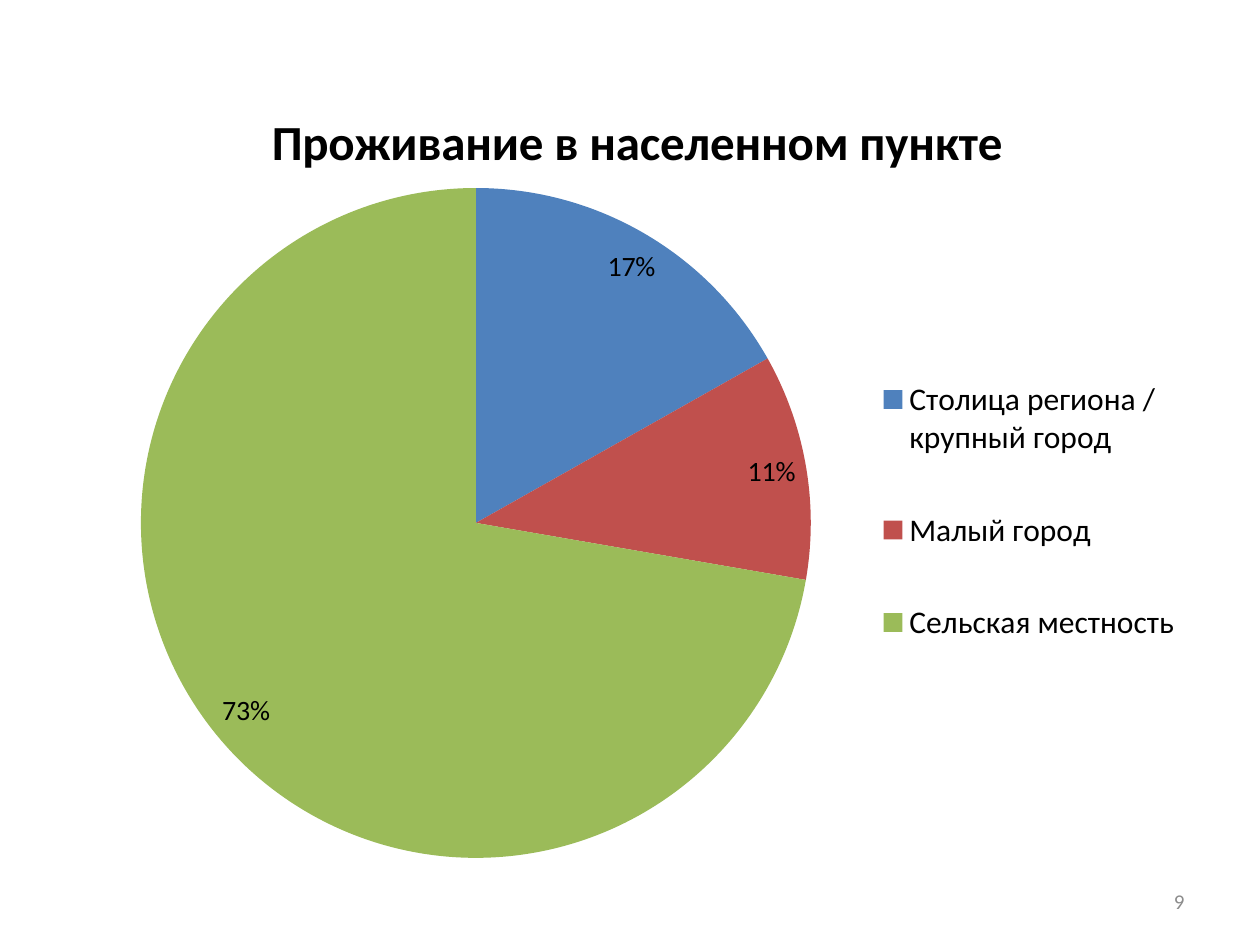
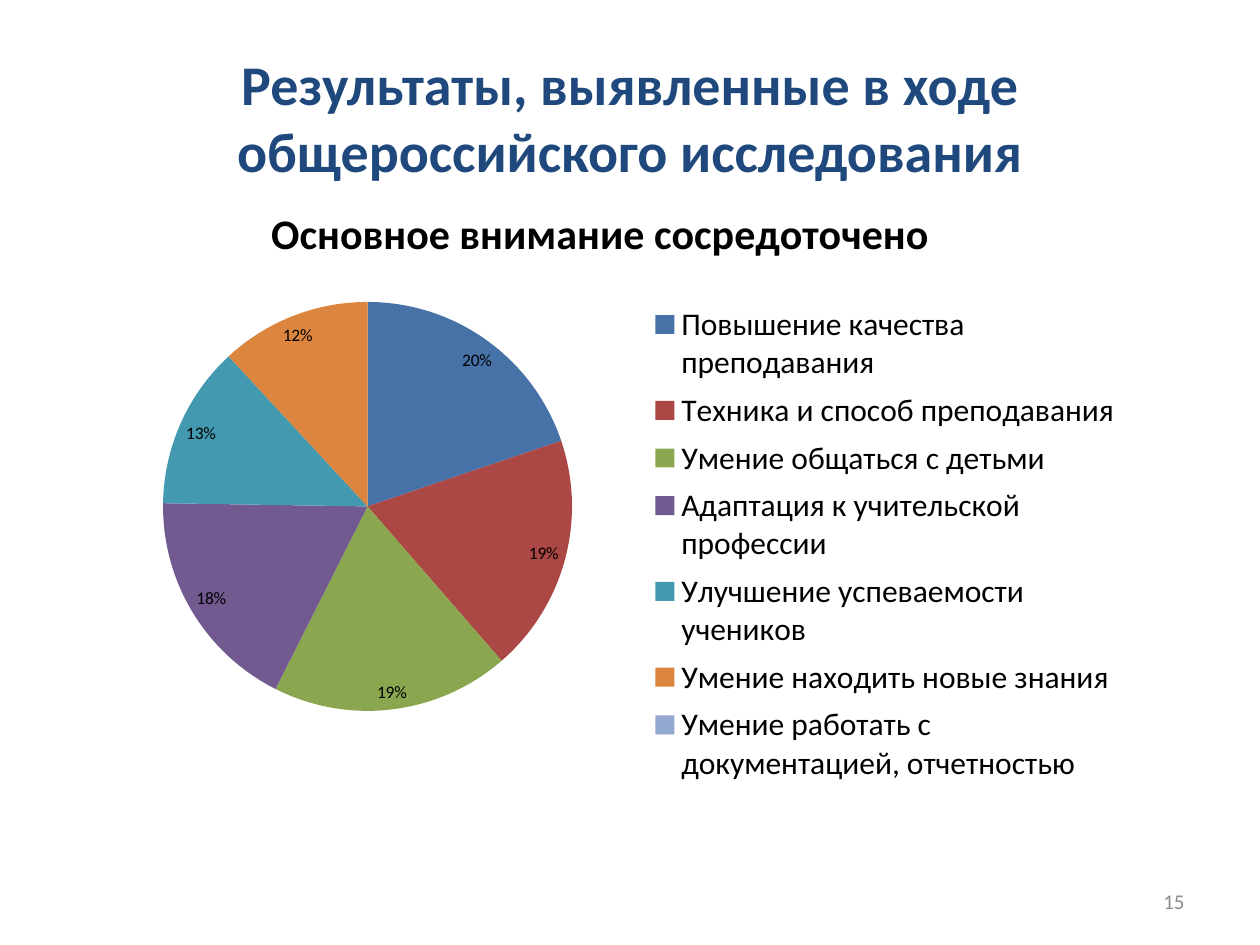
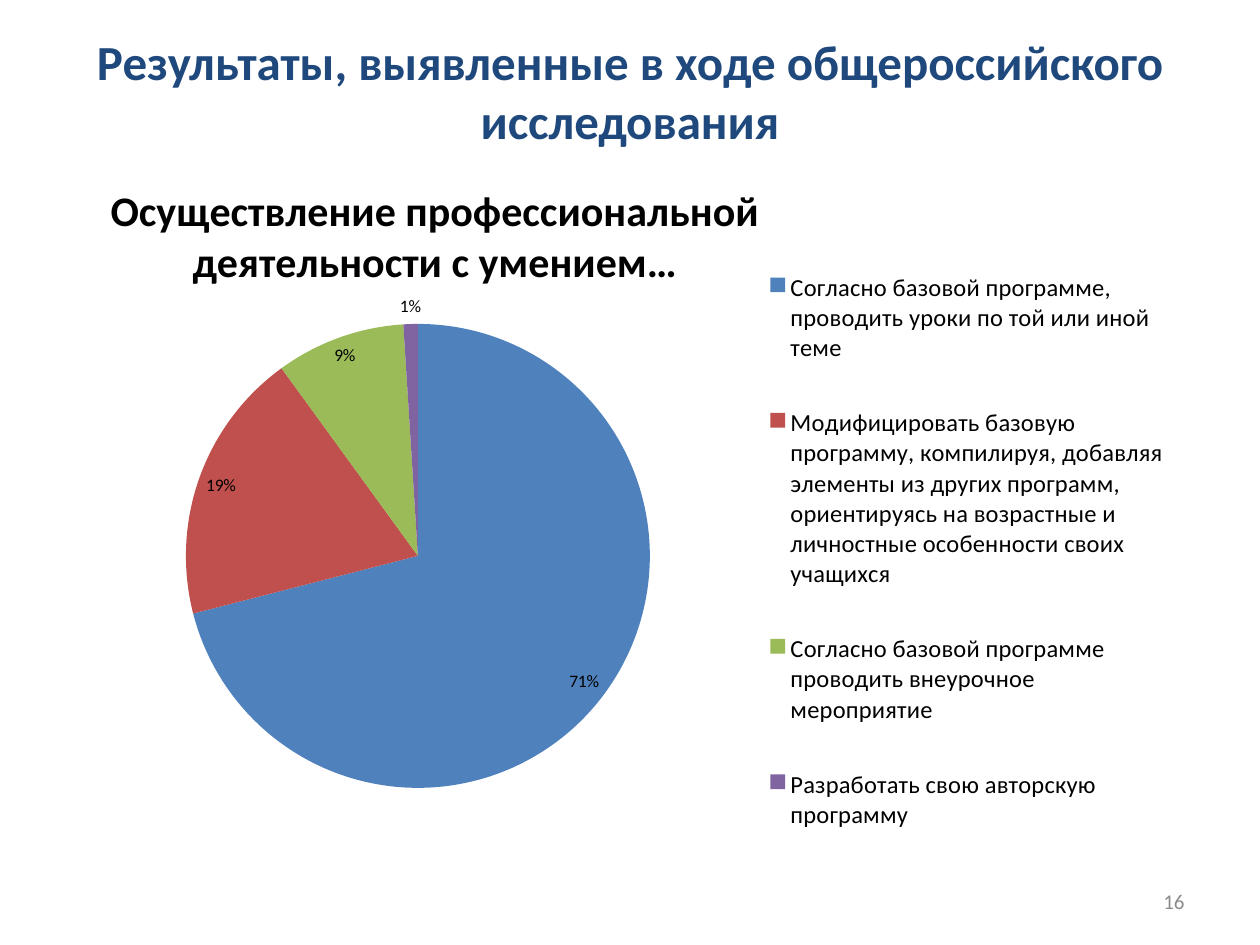
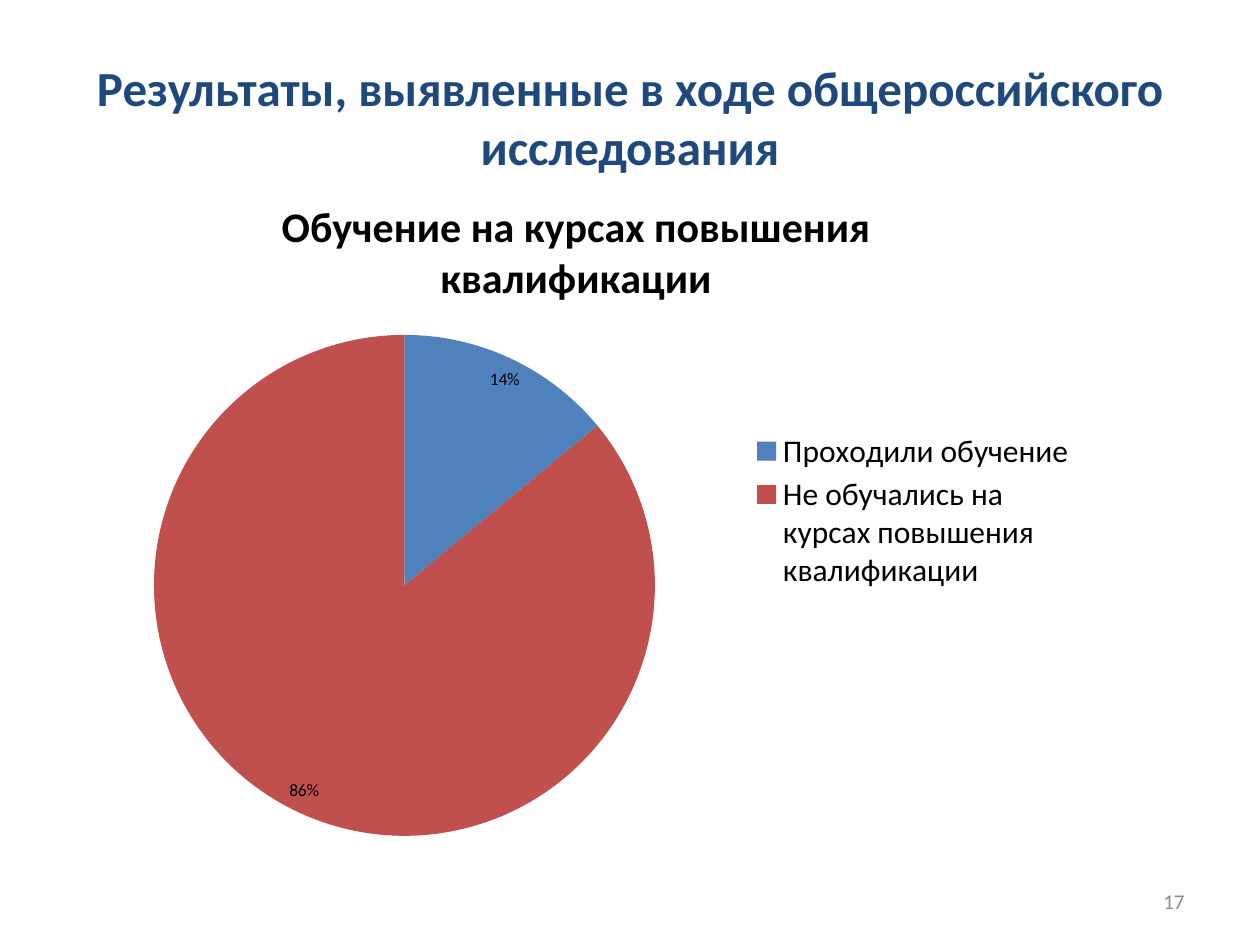
from lxml.etree import SubElement
from pptx import Presentation
from pptx.chart.data import CategoryChartData
from pptx.dml.color import RGBColor
from pptx.enum.chart import XL_CHART_TYPE, XL_LABEL_POSITION, XL_LEGEND_POSITION
from pptx.enum.text import MSO_ANCHOR, PP_ALIGN
from pptx.oxml.ns import qn
from pptx.util import Pt

PX = 914400 // 126
FONT = "Calibri"
BLACK = RGBColor(0x00, 0x00, 0x00)
NAVY = RGBColor(0x1F, 0x49, 0x7D)
GRAY = RGBColor(0x8C, 0x8C, 0x8C)
BLUE = RGBColor(0x4F, 0x81, 0xBD)
RED = RGBColor(0xC0, 0x50, 0x4D)
GREEN = RGBColor(0x9B, 0xBB, 0x59)
PURPLE = RGBColor(0x80, 0x64, 0xA2)
BASIC_COLORS = [BLUE, RED, GREEN, PURPLE]
DEEP_COLORS = [
    RGBColor(0x46, 0x72, 0xA8),
    RGBColor(0xAB, 0x47, 0x44),
    RGBColor(0x8A, 0xA6, 0x4F),
    RGBColor(0x72, 0x59, 0x90),
    RGBColor(0x42, 0x99, 0xB0),
    RGBColor(0xDC, 0x85, 0x3E),
    RGBColor(0x93, 0xA9, 0xCF),
]

HEADING = "Результаты, выявленные в ходе общероссийского исследования"
NUMBER_BOX = (903, 876, 294, 50)
PERCENT_FORMAT = "0%;;"
VALUE_FORMAT = '0"%";;'


def style_font(font, size, color=BLACK, bold=False):
    font.name = FONT
    font.size = Pt(size)
    font.bold = bold
    font.color.rgb = color


def add_text(slide, box, text, size, color, alignment, bold=False):
    shape = slide.shapes.add_textbox(*(length * PX for length in box))
    frame = shape.text_frame
    frame.word_wrap = True
    frame.vertical_anchor = MSO_ANCHOR.MIDDLE
    frame.text = text
    paragraph = frame.paragraphs[0]
    paragraph.alignment = alignment
    style_font(paragraph.runs[0].font, size, color, bold)


def add_heading(slide, height, size):
    add_text(slide, (63, 38, 1134, height), HEADING, size, NAVY, PP_ALIGN.CENTER, True)


def add_slide_number(slide, number):
    add_text(slide, NUMBER_BOX, str(number), 12, GRAY, PP_ALIGN.RIGHT)


def make_layout(parent, index, chart_box, part_box, inner=False):
    for old_layout in parent.findall(qn("c:layout")):
        parent.remove(old_layout)
    layout = SubElement(parent, qn("c:layout"))
    parent.insert(index, layout)
    manual = SubElement(layout, qn("c:manualLayout"))
    settings = [("layoutTarget", "inner")] if inner else []
    settings += [("xMode", "edge"), ("yMode", "edge")]
    _, _, width, height = chart_box
    extents = (width, height, width, height)
    settings += [
        (name, f"{length / extent:.4f}")
        for name, length, extent in zip("xywh", part_box, extents)
    ]
    for name, value in settings:
        SubElement(manual, qn(f"c:{name}")).set("val", value)


def add_pie(slide, box, title, title_size, shares, colors, pie_box, legend_box,
            legend_size=18, label_size=10, show_values=False, title_origin=None):
    data = CategoryChartData()
    data.categories = list(shares)
    data.add_series(title, list(shares.values()))
    frame = slide.shapes.add_chart(
        XL_CHART_TYPE.PIE, *(length * PX for length in box), data
    )
    chart = frame.chart
    style_font(chart.font, 10)

    chart.has_title = True
    title_frame = chart.chart_title.text_frame
    title_frame.text = title
    style_font(title_frame.paragraphs[0].runs[0].font, title_size, bold=True)
    if title_origin:
        make_layout(chart.element.find(".//" + qn("c:title")), 1, box, title_origin)

    chart.has_legend = True
    legend = chart.legend
    legend.position = XL_LEGEND_POSITION.RIGHT
    legend.include_in_layout = False
    style_font(legend.font, legend_size)
    make_layout(chart.element.find(".//" + qn("c:legend")), 1, box, legend_box)
    make_layout(chart.element.find(".//" + qn("c:plotArea")), 0, box, pie_box, True)

    plot = chart.plots[0]
    plot.vary_by_categories = True
    for index, color in enumerate(colors[:len(shares)]):
        fill = plot.series[0].points[index].format.fill
        fill.solid()
        fill.fore_color.rgb = color

    plot.has_data_labels = True
    labels = plot.data_labels
    labels.show_value = show_values
    labels.show_percentage = not show_values
    labels.number_format = VALUE_FORMAT if show_values else PERCENT_FORMAT
    labels.number_format_is_linked = False
    labels.position = XL_LABEL_POSITION.BEST_FIT
    style_font(labels.font, label_size)


def build_residence(slide):
    shares = {
        "Столица региона / крупный город": 17,
        "Малый город": 11,
        "Сельская местность": 73,
    }
    add_slide_number(slide, 9)
    add_pie(slide, (77, 77, 1120, 800), "Проживание в населенном пункте", 28,
            shares, BASIC_COLORS, (64, 111, 670, 670), (793, 249, 318, 370),
            label_size=16, show_values=True)


def build_focus(slide):
    shares = {
        "Повышение качества преподавания": 20,
        "Техника и способ преподавания": 19,
        "Умение общаться с детьми": 19,
        "Адаптация к учительской профессии": 18,
        "Улучшение успеваемости учеников": 13,
        "Умение находить новые знания": 12,
        "Умение работать с документацией, отчетностью": 0,
    }
    add_heading(slide, 157, 32)
    add_slide_number(slide, 15)
    add_pie(slide, (63, 178, 1074, 666), "Основное внимание сосредоточено", 24,
            shares, DEEP_COLORS, (63, 124, 483, 409), (582, 118, 480, 496))


def build_skills(slide):
    shares = {
        "Согласно базовой программе, проводить уроки по той или иной теме": 71,
        "Модифицировать базовую программу, компилируя, добавляя элементы из "
        "других программ, ориентируясь на возрастные и личностные особенности "
        "своих учащихся": 19,
        "Согласно базовой программе проводить внеурочное мероприятие": 9,
        "Разработать свою авторскую программу": 1,
    }
    add_heading(slide, 105, 28)
    add_slide_number(slide, 16)
    add_pie(slide, (63, 142, 1113, 733),
            "Осуществление профессиональной деятельности с умением…", 24,
            shares, BASIC_COLORS, (66, 182, 578, 464), (699, 86, 410, 647),
            legend_size=14, title_origin=(40, 32))


def build_training(slide):
    shares = {
        "Проходили обучение": 14,
        "Не обучались на курсах повышения квалификации": 86,
    }
    add_heading(slide, 157, 28)
    add_slide_number(slide, 17)
    add_pie(slide, (63, 170, 1026, 684),
            "Обучение на курсах повышения квалификации", 24,
            shares, BASIC_COLORS, (91, 165, 501, 501), (685, 257, 330, 168))


def main():
    presentation = Presentation()
    presentation.slide_width = 1260 * PX
    presentation.slide_height = 945 * PX
    for build in (build_residence, build_focus, build_skills, build_training):
        build(presentation.slides.add_slide(presentation.slide_layouts[6]))
    presentation.save("out.pptx")


if __name__ == "__main__":
    main()
